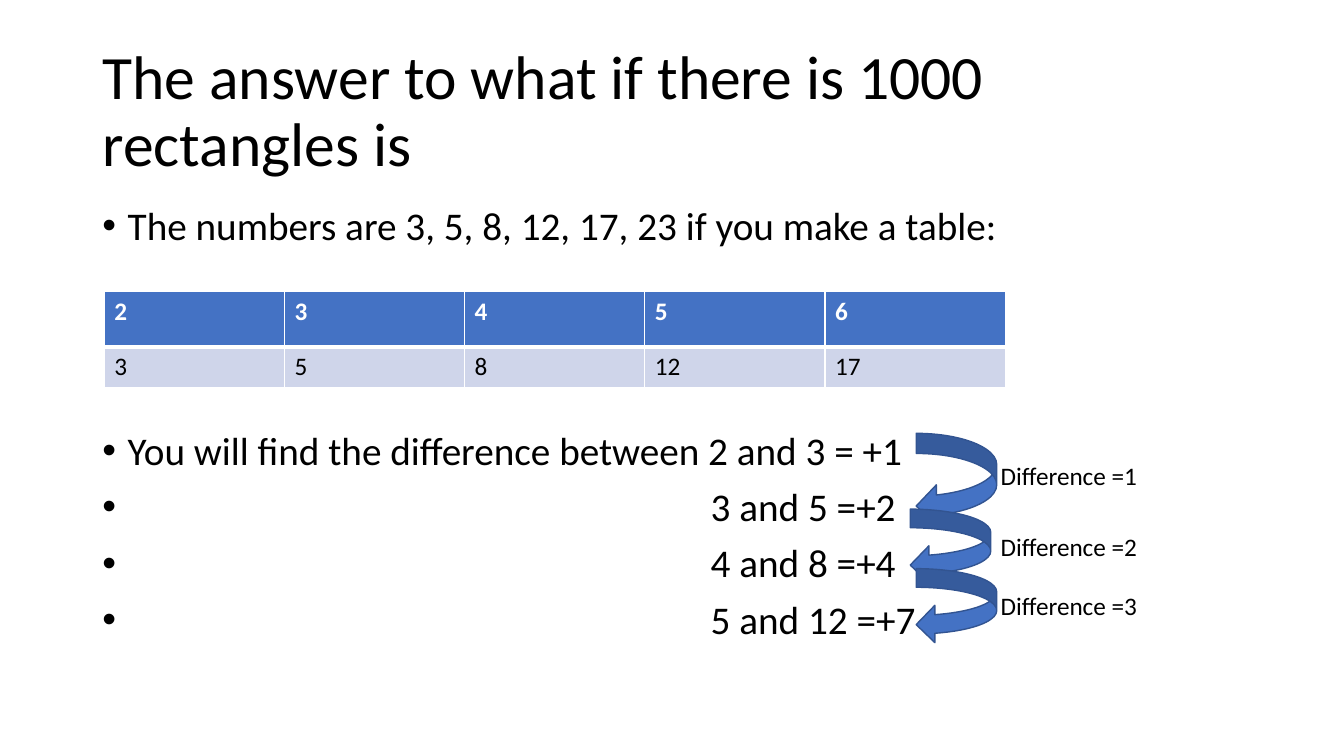
from lxml import etree
from pptx import Presentation
from pptx import util as u
from pptx.dml.color import RGBColor
from pptx.enum import shapes, text
from pptx.oxml.ns import qn

BLACK = RGBColor(0x00, 0x00, 0x00)
WHITE = RGBColor(0xFF, 0xFF, 0xFF)
BLUE = RGBColor(0x44, 0x72, 0xC4)
DARK_BLUE = RGBColor(0x32, 0x54, 0x91)
PALE_BLUE = RGBColor(0xCF, 0xD5, 0xEA)

MARGIN, WIDTH = 2.33, 29.21
BULLET_INDENT, DEEP_INDENT = 0.64, 15.33
BULLETS = [
    ("The numbers are 3, 5, 8, 12, 17, 23 if you make a table:", BULLET_INDENT, 10),
    ("You will find the difference between 2 and 3 = +1", BULLET_INDENT, 130.5),
    ("3 and 5 =+2", DEEP_INDENT, 10),
    ("4 and 8 =+4", DEEP_INDENT, 10),
    ("5 and 12 =+7", DEEP_INDENT, 10),
]
NUMBERS = [["2", "3", "4", "5", "6"], ["3", "5", "8", "12", "17"]]
DIFFERENCES = [
    ("Difference =1", 11.48, (23.09, 10.92, 2.03, 2.34)),
    ("Difference =2", 13.26, (22.94, 12.83, 2.03, 1.88)),
    ("Difference =3", 14.76, (23.09, 14.33, 2.03, 1.88)),
]


class SlideBuilder:
    """Draws styled elements on the current page."""

    font = "Calibri"

    def __init__(self, page):
        self.page = page

    def style(self, para, size, color=BLACK, bold=False):
        for span in para.runs:
            span.font.name = self.font
            span.font.size = u.Pt(size)
            span.font.color.rgb = color
            span.font.bold = bold

    def textbox(self, words, place, size, anchor=text.MSO_ANCHOR.TOP, spacing=1.0):
        box = self.page.shapes.add_textbox(*map(u.Cm, place))
        frame = box.text_frame
        frame.word_wrap = True
        frame.vertical_anchor = anchor
        frame.text = words
        for para in frame.paragraphs:
            para.line_spacing = spacing
            self.style(para, size)
        return frame

    def bullets(self, items, place, size):
        words = "\n".join(item[0] for item in items)
        frame = self.textbox(words, place, size, spacing=0.9)
        for para, (_, indent, before) in zip(frame.paragraphs, items):
            para.space_before = u.Pt(before)
            properties = para._p.get_or_add_pPr()
            properties.set("marL", str(u.Cm(indent)))
            properties.set("indent", str(-u.Cm(indent)))
            etree.SubElement(properties, qn("a:buFont")).set("typeface", "Arial")
            etree.SubElement(properties, qn("a:buChar")).set("char", "•")

    def border(self, cell, side, points):
        properties = cell._tc.get_or_add_tcPr()
        line = etree.SubElement(properties, qn(f"a:ln{side}"), w=str(u.Pt(points)))
        fill = etree.SubElement(line, qn("a:solidFill"))
        etree.SubElement(fill, qn("a:srgbClr")).set("val", str(WHITE))

    def table(self, rows, left, top, column_width, row_heights):
        columns = len(rows[0])
        place = (left, top, column_width * columns, sum(row_heights))
        grid = self.page.shapes.add_table(len(rows), columns, *map(u.Cm, place)).table
        for column in grid.columns:
            column.width = u.Cm(column_width)
        for index, (values, height) in enumerate(zip(rows, row_heights)):
            header = index == 0
            grid.rows[index].height = u.Cm(height)
            for cell, value in zip(grid.rows[index].cells, values):
                cell.text = value
                self.style(cell.text_frame.paragraphs[0], 18, WHITE if header else BLACK, header)
                top_line, bottom_line = (1, 3) if header else (3, 1)
                for side, points in zip("LRTB", (1, 1, top_line, bottom_line)):
                    self.border(cell, side, points)
                cell.fill.solid()
                cell.fill.fore_color.rgb = BLUE if header else PALE_BLUE

    def arrow(self, place):
        shape = self.page.shapes.add_shape(
            shapes.MSO_SHAPE.CURVED_LEFT_ARROW, *map(u.Cm, place))
        shape.shadow.inherit = False
        shape.fill.solid()
        shape.fill.fore_color.rgb = BLUE
        shape.line.color.rgb = DARK_BLUE
        shape.line.width = u.Pt(1)


def main():
    deck = Presentation()
    deck.slide_width, deck.slide_height = u.Cm(33.87), u.Cm(19.05)
    builder = SlideBuilder(deck.slides.add_slide(deck.slide_layouts[6]))
    builder.textbox("The answer to what if there is 1000 rectangles is",
                    (MARGIN, 1.01, WIDTH, 3.68), 44, text.MSO_ANCHOR.MIDDLE, 0.9)
    builder.bullets(BULLETS, (MARGIN, 5.07, WIDTH, 12.09), 28)
    builder.table(NUMBERS, 2.63, 7.34, 4.54, (1.4, 1.02))
    for label, label_top, arrow_place in DIFFERENCES:
        builder.arrow(arrow_place)
        builder.textbox(label, (24.97, label_top, 7.62, 1.03), 18)
    deck.save("out.pptx")


if __name__ == "__main__":
    main()
